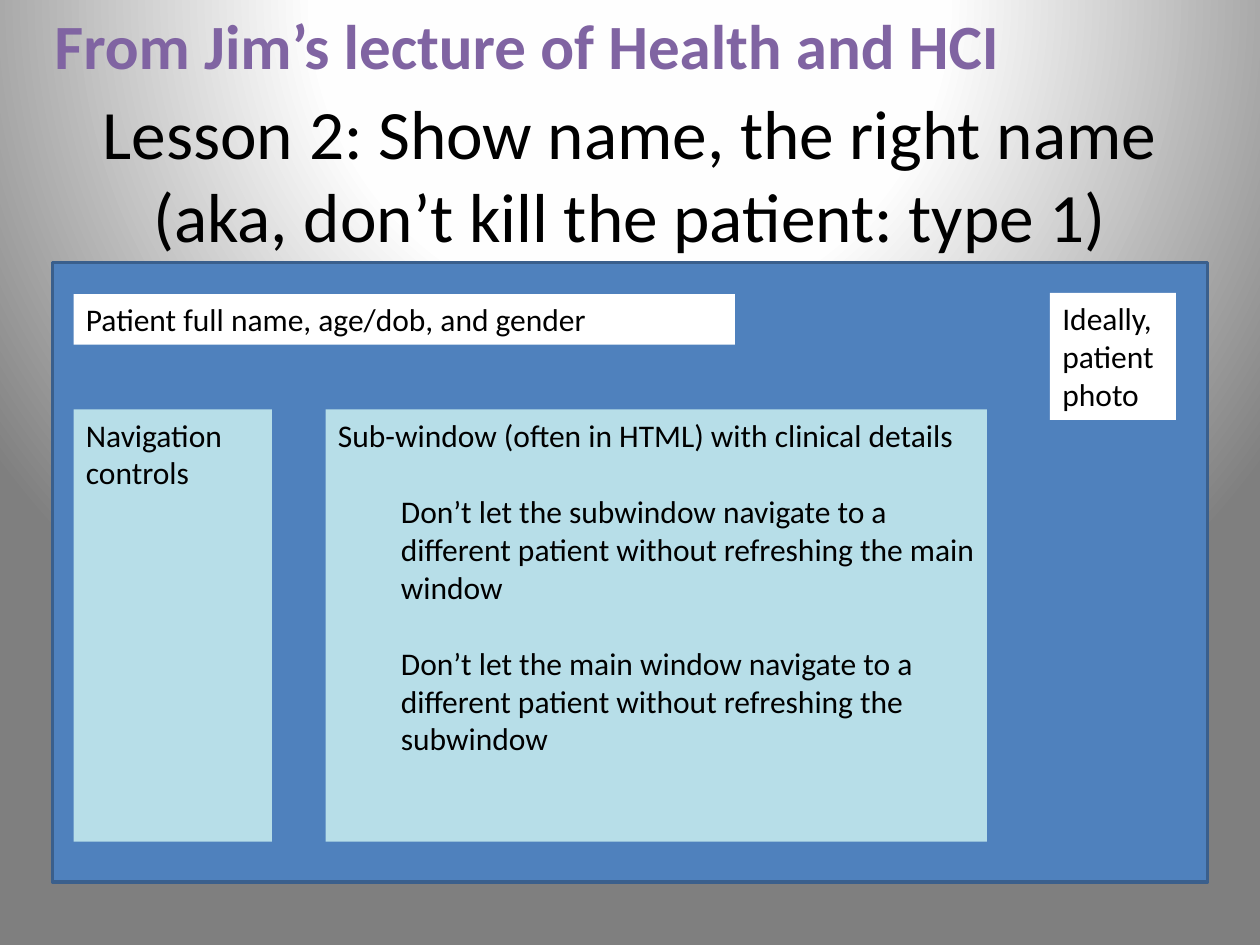
"""Build the slide on showing the right patient name in a clinical window."""
from pptx import Presentation
from pptx.dml.color import RGBColor
from pptx.enum.shapes import MSO_SHAPE
from pptx.enum.text import MSO_ANCHOR, PP_ALIGN
from pptx.oxml import parse_xml
from pptx.oxml.ns import nsdecls, qn
from pptx.util import Pt

RECTANGLE = MSO_SHAPE.RECTANGLE
TOP, MIDDLE = MSO_ANCHOR.TOP, MSO_ANCHOR.MIDDLE
LEFT, CENTER = PP_ALIGN.LEFT, PP_ALIGN.CENTER

THEME = {
    "font": "Calibri",
    "title_size": 39.6, "source_size": 36, "body_size": 18,
    "ink": "000000", "source": "8064A2",
    "window": "4F81BD", "window_line": "3A5F8C",
    "label": "FFFFFF", "pane": "B7DEE8",
    "background": [(0, "FFFFFF"), (40, "FEFEFE"), (100, "7F7F7F")],
}
INDENT, PARAGRAPH_GAP = 36, 22

TITLE = "Lesson 2: Show name, the right name (aka, don’t kill the patient: type 1)"
TITLE_BOX = (36, 54, 648, 90)
SOURCE = "From Jim’s lecture of Health and HCI"
SOURCE_BOX = (24, 0, 564, 51)
WINDOW_BOX = (30, 150, 660, 354)

NAVIGATION_LEFT, DETAILS_LEFT = 42, 186
PANE_TOP, PANE_HEIGHT, WIDE = 234, 247, 378
PANELS = [
    ((NAVIGATION_LEFT, 168, WIDE, 29), "label", ["Patient full name, age/dob, and gender"]),
    ((600, 167.3, 72, 72.7), "label", ["Ideally, patient photo"]),
    ((DETAILS_LEFT, PANE_TOP, WIDE, PANE_HEIGHT), "pane", [
        "Sub-window (often in HTML) with clinical details",
        "Don’t let the subwindow navigate to a different patient without refreshing the main window",
        "Don’t let the main window navigate to a different patient without refreshing the subwindow",
    ]),
    ((NAVIGATION_LEFT, PANE_TOP, 113.4, PANE_HEIGHT), "pane", ["Navigation controls"]),
]


def color(name):
    return RGBColor.from_string(THEME[name])


def paint_background(slide):
    slide.background.fill.gradient()
    linear = next(slide.element.iter(qn("a:gradFill")))
    stops = "".join(
        f'<a:gs pos="{position * 1000}"><a:srgbClr val="{value}"/></a:gs>'
        for position, value in THEME["background"]
    )
    radial = parse_xml(
        f'<a:gradFill {nsdecls("a")} rotWithShape="1"><a:gsLst>{stops}</a:gsLst>'
        '<a:path path="circle"><a:fillToRect l="50000" t="-80000" r="50000" b="180000"/>'
        "</a:path></a:gradFill>"
    )
    linear.getparent().replace(linear, radial)


def write(shape, lines, size, ink="ink", align=LEFT, anchor=TOP, bold=False):
    frame = shape.text_frame
    frame.text = "\n".join(lines)
    frame.word_wrap = True
    frame.vertical_anchor = anchor
    for index, paragraph in enumerate(frame.paragraphs):
        paragraph.alignment = align
        if index:
            paragraph.level = 1
            paragraph.space_before = Pt(PARAGRAPH_GAP)
            properties = paragraph._p.get_or_add_pPr()
            properties.set("marL", str(Pt(INDENT)))
            properties.set("indent", "0")
        for run in paragraph.runs:
            run.font.name = THEME["font"]
            run.font.size = Pt(THEME[size])
            run.font.bold = bold
            run.font.color.rgb = color(ink)


def add_rectangle(slide, box, fill):
    shape = slide.shapes.add_shape(RECTANGLE, *map(Pt, box))
    shape.shadow.inherit = False
    shape.fill.solid()
    shape.fill.fore_color.rgb = color(fill)
    shape.line.fill.background()
    return shape


def main():
    presentation = Presentation()
    presentation.slide_width, presentation.slide_height = Pt(720), Pt(540)
    slide = presentation.slides.add_slide(presentation.slide_layouts[6])
    paint_background(slide)

    title = slide.shapes.add_textbox(*map(Pt, TITLE_BOX))
    write(title, [TITLE], "title_size", align=CENTER, anchor=MIDDLE)

    window = add_rectangle(slide, WINDOW_BOX, "window")
    window.line.color.rgb = color("window_line")
    window.line.width = Pt(2)

    for box, fill, lines in PANELS:
        write(add_rectangle(slide, box, fill), lines, "body_size")

    source = slide.shapes.add_textbox(*map(Pt, SOURCE_BOX))
    write(source, [SOURCE], "source_size", ink="source", bold=True)

    presentation.save("out.pptx")


if __name__ == "__main__":
    main()
